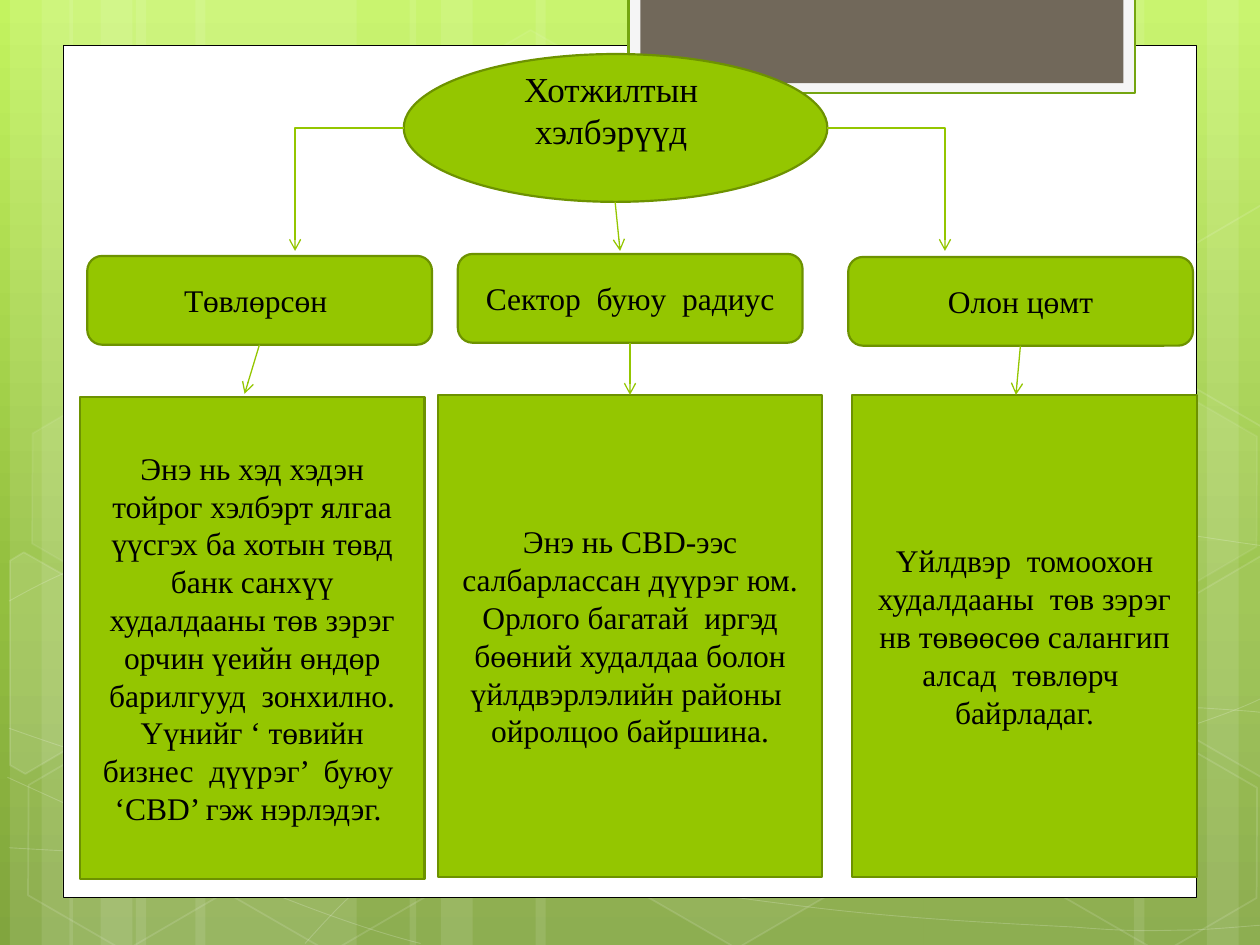
from copy import deepcopy
from math import cos, radians, sin

from lxml.etree import SubElement
from pptx import Presentation
from pptx.dml.color import RGBColor
from pptx.enum.shapes import MSO_CONNECTOR as Connector, MSO_SHAPE as Shape
from pptx.enum.text import MSO_ANCHOR as Anchor, PP_ALIGN as Align
from pptx.oxml.ns import qn
from pptx.util import Cm, Pt

WIDTH, HEIGHT = 25.4, 19.05
TILT = 30
STRIPES = [(2.74, 4.45), (0.2, 1.27), (0.84, 2.11), (3.94, 4.45), (1.4, 1.27), (2.03, 2.11),
           (18.62, 4.45), (24.33, 1.27), (22.86, 2.11), (10.8, 7.82), (8.26, 1.27), (8.89, 2.11)]
CURVES = [
    [(0.18, 17.09), (1.55, 17.17), (2.92, 17.25), (4.83, 17.22), (6.73, 17.2), (9.09, 17.15),
     (11.63, 16.89), (14.17, 16.64), (17.78, 16.15), (20.12, 15.67), (22.43, 15.19),
     (24.82, 14.43), (25.58, 14)],
    [(0.18, 12.12), (0.91, 11.71), (1.65, 11.33), (3.07, 10.95), (4.52, 10.57), (6.58, 10.01),
     (8.81, 9.83), (11.07, 9.65), (13.82, 9.63), (16.61, 9.83), (19.41, 10.03),
     (24.05, 10.82), (25.58, 11.02)],
    [(0.15, 15.67), (3.23, 17.07), (6.27, 18.47), (8.48, 19.02)],
    [(0.18, 14.68), (0.97, 14.96), (1.78, 15.24), (3.25, 15.65), (4.72, 16.03), (6.93, 16.66),
     (9.07, 17.09), (11.18, 17.53), (13.84, 17.98), (15.95, 18.24), (18.06, 18.52),
     (20.32, 18.62), (21.67, 18.69), (22.99, 18.8), (23.34, 18.75), (24, 18.75),
     (24.66, 18.72), (25.12, 18.67), (25.58, 18.64)],
    [(6.15, 19.02), (6.6, 18.52), (7.06, 18.01), (7.67, 17.55), (8.28, 17.09), (9.14, 16.59),
     (9.86, 16.23), (10.57, 15.88), (11, 15.72), (11.94, 15.47), (12.88, 15.21),
     (14.55, 14.86), (15.44, 14.68), (16.36, 14.5), (16.48, 14.5), (17.27, 14.45),
     (18.06, 14.38), (19.3, 14.3), (20.17, 14.27), (21.06, 14.25), (22.5, 14.27),
     (22.5, 14.27), (23.07, 14.27), (23.64, 14.27), (24.21, 14.27), (24.66, 14.3),
     (25.12, 14.33), (25.32, 14.35), (25.55, 14.38), (25.48, 14.35), (25.55, 14.38)],
]
HEXAGONS = [(8.48, 0.91, 4, 8), (12.62, 14.96, 6, 12), (0.28, 15.01, None, 12),
            (0.36, 7.92, 7, 8), (4.42, 15.04, None, 12), (19.13, 11.51, 10, 12),
            (21.18, 15.06, None, 12), (21.18, 7.98, 7, 8)]
LEFT_CUT = [(0.2, 11.3), (0.48, 11.13), (2.44, 12.24), (2.41, 14.48), (0.51, 15.6), (0.2, 15.42)]
RIGHT_CUT = [(23.52, 12.32), (25.43, 11.2), (25.63, 11.33), (25.63, 15.57), (25.45, 15.67),
             (23.52, 14.55)]
UPPER_CUT = [(x, y - 7.07) for x, y in RIGHT_CUT]
CUTS = [(LEFT_CUT, (0.91, 13.59), 10), (RIGHT_CUT, (25.02, 13.21), 4),
        (UPPER_CUT, (25.02, 6.14), None)]
FORMS = [
    ("Төвлөрсөн ", (1.76, 5.16, 6.95, 1.79),
     "Энэ нь хэд хэдэн тойрог хэлбэрт ялгаа үүсгэх ба хотын төвд банк санхүү худалдааны төв "
     "зэрэг орчин үеийн өндөр барилгууд  зонхилно. Үүнийг ‘ төвийн бизнес  дүүрэг’  буюу  "
     "‘CBD’ гэж нэрлэдэг. ", (1.61, 8, 6.95, 9.72)),
    ("Сектор  буюу  радиус", (9.23, 5.12, 6.95, 1.79),
     "Энэ нь CBD-ээс салбарлассан дүүрэг юм. Орлого багатай  иргэд бөөний худалдаа болон "
     "үйлдвэрлэлийн районы  ойролцоо байршина.", (8.83, 7.96, 7.75, 9.72)),
    ("Олон цөмт", (17.1, 5.18, 6.95, 1.79),
     "Үйлдвэр  томоохон худалдааны  төв зэрэг нв төвөөсөө салангип алсад  төвлөрч  "
     "байрладаг.", (17.18, 7.96, 6.95, 9.72)),
]
ARROWS = [((12.7, 6.91), (12.7, 7.96)), ((20.57, 6.97), (20.48, 7.96)),
          ((5.23, 6.95), (4.93, 7.94)), ((12.4, 4.07), (12.5, 5.06))]
ELBOWS = [((16.67, 2.58), (19.05, 5.06)), ((8.14, 2.58), (5.95, 5.06))]


def color(value):
    return RGBColor.from_string(value)


def turned(points, center, degrees):
    c, s = cos(radians(degrees)), sin(radians(degrees))
    offsets = [(x - center[0], y - center[1]) for x, y in points]
    return [(center[0] + x * c - y * s, center[1] + x * s + y * c) for x, y in offsets]


class DiagramSlide:
    """Draws styled elements on one slide, with lengths in centimetres."""

    green, edge, white, black = "94C600", "6D9200", "FFFFFF", "000000"
    font = "Times New Roman"

    def __init__(self, presentation):
        self.slide = presentation.slides.add_slide(presentation.slide_layouts[6])
        self.shapes = self.slide.shapes

    def background(self, stops):
        fill = self.slide.background.fill
        fill.gradient()
        fill.gradient_angle = 270
        stop_list = self.slide.element.find(".//" + qn("a:gsLst"))
        while len(stop_list) < len(stops):
            stop_list.append(deepcopy(stop_list[-1]))
        for stop, (position, value) in zip(fill.gradient_stops, stops):
            stop.position, stop.color.rgb = position, color(value)

    def paint(self, fill, value, opacity):
        if value is None or opacity is None:
            fill.background()
            return
        fill.solid()
        fill.fore_color.rgb = color(value)
        if opacity < 100:
            node = fill._xPr.find(".//" + qn("a:srgbClr"))
            SubElement(node, qn("a:alpha"), val=str(opacity * 1000))

    def style(self, shape, fill, line, width, opacity=100, line_opacity=100):
        shape.shadow.inherit = False
        self.paint(shape.fill, fill, opacity)
        self.paint(shape.line.fill, line, line_opacity)
        if line:
            shape.line.width = Pt(width)

    def shape(self, kind, box, fill, line=None, width=1.25, **opacity):
        shape = self.shapes.add_shape(kind, *map(Cm, box))
        self.style(shape, fill, line, width, **opacity)
        return shape

    def outline(self, points, width, closed, opacity, line_opacity):
        points = [(Cm(x), Cm(y)) for x, y in points]
        builder = self.shapes.build_freeform(*points[0])
        builder.add_line_segments(points[1:], close=closed)
        shape = builder.convert_to_shape()
        self.style(shape, self.white, self.white, width, opacity, line_opacity)
        return shape

    def curve(self, controls):
        shape = self.outline(controls, 0.5, False, None, 20)
        segments = list(shape._element.iter(qn("a:lnTo")))
        outline = segments[0].getparent()
        for start in range(0, len(segments), 3):
            bezier = SubElement(outline, qn("a:cubicBezTo"))
            for segment in segments[start:start + 3]:
                bezier.append(segment[0])
                outline.remove(segment)

    def cut_hexagon(self, points, center, opacity):
        shape = self.outline(turned(points, center, -TILT), 1, True, opacity, 12)
        shape.rotation = TILT

    def hexagon(self, left, top, opacity, line_opacity):
        shape = self.shape(Shape.HEXAGON, (left, top, 4.45, 3.86), self.white, self.white, 1,
                           opacity=opacity, line_opacity=line_opacity)
        shape.adjustments[0] = 0.285
        shape.rotation = TILT

    def label(self, kind, box, text, size=18, bottom=0.13):
        frame = self.shape(kind, box, self.green, self.edge).text_frame
        frame.word_wrap = True
        frame.vertical_anchor = Anchor.MIDDLE
        frame.margin_bottom = Cm(bottom)
        frame.text = text
        paragraph = frame.paragraphs[0]
        paragraph.alignment = Align.CENTER
        font = paragraph.runs[0].font
        font.name, font.size, font.color.rgb = self.font, Pt(size), color(self.black)

    def arrow(self, start, end, kind=Connector.STRAIGHT):
        connector = self.shapes.add_connector(kind, *map(Cm, start + end))
        connector.line.width = Pt(0.75)
        connector.line.color.rgb = color(self.green)
        properties = connector._element.spPr
        SubElement(properties.find(qn("a:ln")), qn("a:tailEnd"), type="arrow")
        SubElement(properties, qn("a:effectLst"))
        if kind == Connector.ELBOW:
            properties.find(qn("a:prstGeom")).set("prst", "bentConnector2")


def main():
    presentation = Presentation()
    presentation.slide_width, presentation.slide_height = Cm(WIDTH), Cm(HEIGHT)
    diagram = DiagramSlide(presentation)

    diagram.background([(0, "C3F35F"), (0.62, "93BF3F"), (1, "81A53E")])
    for left, width in STRIPES:
        diagram.shape(Shape.RECTANGLE, (left, 0, width, HEIGHT), diagram.white, opacity=10)
    for controls in CURVES:
        diagram.curve(controls)
    for hexagon in HEXAGONS:
        diagram.hexagon(*hexagon)
    for cut in CUTS:
        diagram.cut_hexagon(*cut)

    diagram.shape(Shape.RECTANGLE, (1.27, 0.91, 22.86, 17.19), diagram.white, diagram.black, 0.5)
    diagram.shape(Shape.RECTANGLE, (12.67, -0.05, 10.21, 1.93), "F5F5F5", "74A510")
    diagram.shape(Shape.RECTANGLE, (12.91, -0.05, 9.74, 1.73), "71685A")

    diagram.label(Shape.OVAL, (8.14, 1.09, 8.54, 2.98), "Хотжилтын  хэлбэрүүд ", 20, 0.86)
    for name, name_box, description, description_box in FORMS:
        diagram.label(Shape.ROUNDED_RECTANGLE, name_box, name)
        diagram.label(Shape.RECTANGLE, description_box, description)
    for start, end in ARROWS:
        diagram.arrow(start, end)
    for start, end in ELBOWS:
        diagram.arrow(start, end, Connector.ELBOW)

    presentation.save("out.pptx")


if __name__ == "__main__":
    main()
